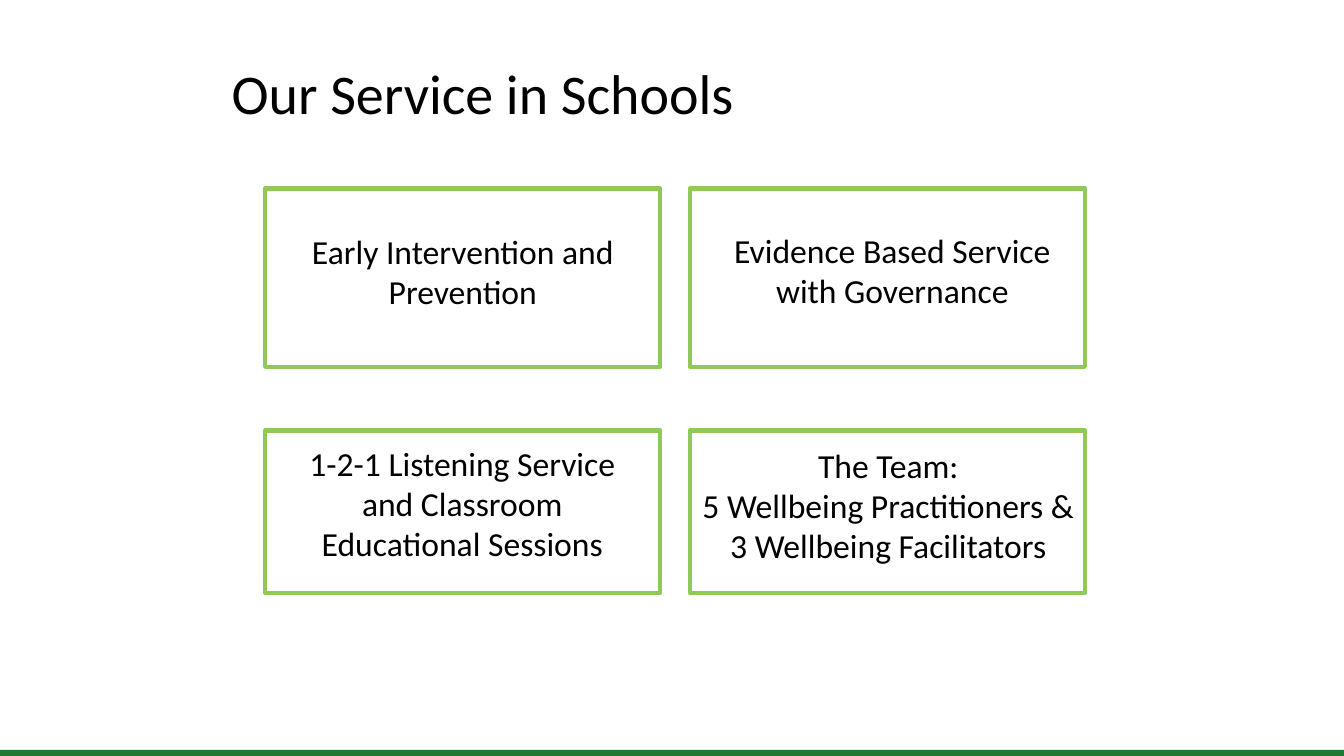
from dataclasses import dataclass

from pptx import Presentation
from pptx import util as u
from pptx.dml.color import RGBColor
from pptx.enum import shapes, text
from pptx.shapes.autoshape import Shape
from pptx.slide import Slide

BLACK = RGBColor(0x00, 0x00, 0x00)
WHITE = RGBColor(0xFF, 0xFF, 0xFF)
LIME = RGBColor(0x91, 0xC8, 0x5A)
GREEN = RGBColor(0x1E, 0x78, 0x32)

SLIDE_W, SLIDE_H = 13.33, 7.5
CARD_W = 3.92
COLUMNS = (2.63, 6.84)
ROWS = ((1.87, 1.77), (4.27, 1.61))


@dataclass(frozen=True)
class Label:
    left: float
    top: float
    width: float
    height: float
    wording: str
    size: int = 24
    align: text.PP_ALIGN = text.PP_ALIGN.CENTER


LABELS = (
    Label(2.2, 0.53, 11, 0.77, "Our Service in Schools", 40, text.PP_ALIGN.LEFT),
    Label(2.97, 2.24, 3.24, 0.91, "Early Intervention and Prevention"),
    Label(6.89, 2.23, 3.92, 0.91, "Evidence Based Service with Governance"),
    Label(2.71, 4.34, 3.75, 1.31,
          "1-2-1 Listening Service and Classroom Educational Sessions"),
    Label(6.44, 4.36, 4.74, 1.31,
          "The Team:\n5 Wellbeing Practitioners &\n3 Wellbeing Facilitators"),
)


def add_box(s: Slide, left: float, top: float, width: float, height: float,
            fill: RGBColor) -> Shape:
    sp = s.shapes.add_shape(shapes.MSO_SHAPE.RECTANGLE, u.Inches(left),
                            u.Inches(top), u.Inches(width), u.Inches(height))
    sp.shadow.inherit = False
    sp.fill.solid()
    sp.fill.fore_color.rgb = fill
    sp.line.fill.background()
    return sp


def add_card(s: Slide, left: float, top: float, height: float) -> None:
    sp = add_box(s, left, top, CARD_W, height, WHITE)
    sp.line.color.rgb = LIME
    sp.line.width = u.Pt(3)


def add_label(s: Slide, label: Label) -> None:
    sp = s.shapes.add_textbox(u.Inches(label.left), u.Inches(label.top),
                              u.Inches(label.width), u.Inches(label.height))
    tf = sp.text_frame
    tf.word_wrap = True
    tf.auto_size = text.MSO_AUTO_SIZE.SHAPE_TO_FIT_TEXT
    tf.text = label.wording
    for p in tf.paragraphs:
        p.alignment = label.align
        for r in p.runs:
            r.font.name = "Calibri"
            r.font.size = u.Pt(label.size)
            r.font.color.rgb = BLACK


def main() -> None:
    prs = Presentation()
    prs.slide_width = u.Inches(SLIDE_W)
    prs.slide_height = u.Inches(SLIDE_H)
    s = prs.slides.add_slide(prs.slide_layouts[6])
    add_box(s, 0, 7.44, SLIDE_W, 0.06, GREEN)
    for top, height in ROWS:
        for left in COLUMNS:
            add_card(s, left, top, height)
    for label in LABELS:
        add_label(s, label)
    prs.save("out.pptx")


if __name__ == "__main__":
    main()
